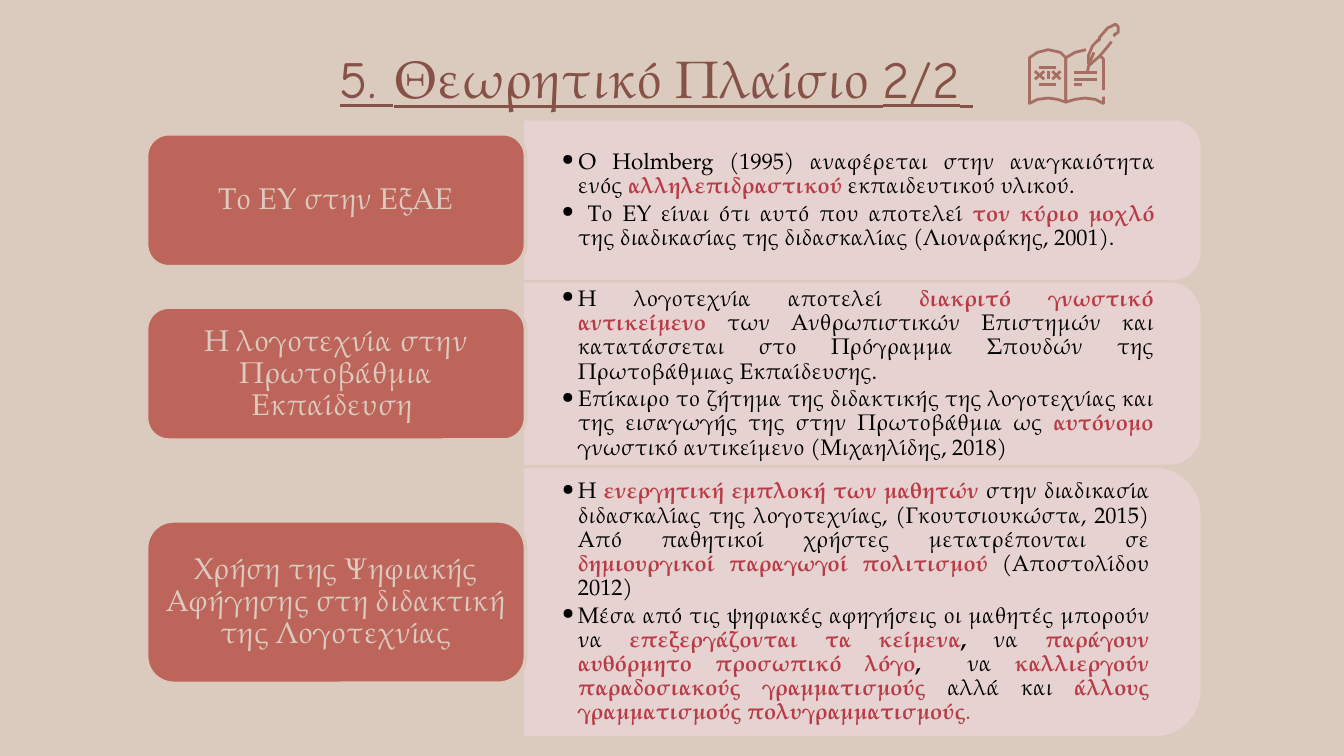
from typing import NamedTuple

from lxml import etree
from pptx import Presentation
from pptx import util as u
from pptx.dml.color import RGBColor
from pptx.enum import shapes, text
from pptx.oxml.ns import qn

SERIF, SANS = "TeX Gyre Pagella", "Comic Neue"
SAND, ROSE, CLAY = "DBCABE", "E8D3D2", "BE655B"
BROWN, INK, RED, BLACK = "865147", "A76F64", "B83C47", "000000"
PANEL_LEFT, PANEL_WIDTH = 3.91, 5.01
LABEL_LEFT, LABEL_WIDTH = 1.09, 2.82


class Span(NamedTuple):
    words: str
    color: str = BLACK
    bold: bool = False


class Section(NamedTuple):
    label: str
    middle: float
    panel_height: float
    label_height: float
    bullets: list[list[Span]]


def key(words: str) -> Span:
    """Emphasised phrase."""
    return Span(words, RED, True)


SECTIONS = [
    Section("Το ΕΥ στην ΕξΑΕ", 1.49, 1.16, 0.99, [
        [Span("Ο Holmberg (1995) αναφέρεται στην αναγκαιότητα ενός "),
         key("αλληλεπιδραστικού "), Span("εκπαιδευτικού υλικού.")],
        [Span(" Το ΕΥ είναι ότι αυτό που αποτελεί "), key("τον κύριο μοχλό "),
         Span("της διαδικασίας της διδασκαλίας (Λιοναράκης, 2001).")],
    ]),
    Section("Η λογοτεχνία στην Πρωτοβάθμια Εκπαίδευση ", 2.78, 1.33, 0.99, [
        [Span("H λογοτεχνία αποτελεί "), key("διακριτό γνωστικό αντικείμενο "),
         Span("των Ανθρωπιστικών Επιστημών και κατατάσσεται στο Πρόγραμμα "
              "Σπουδών της Πρωτοβάθμιας Εκπαίδευσης. ")],
        [Span("Επίκαιρο το ζήτημα της διδακτικής της λογοτεχνίας και της "
              "εισαγωγής της στην Πρωτοβάθμια ως "),
         key("αυτόνομο"), Span(" γνωστικό αντικείμενο (Μιχαηλίδης, 2018)")],
    ]),
    Section("Χρήση της Ψηφιακής Αφήγησης στη διδακτική της Λογοτεχνίας", 4.48, 1.97, 1.21, [
        [Span("H "), key("ενεργητική εμπλοκή των μαθητών "),
         Span("στην διαδικασία διδασκαλίας της λογοτεχνίας, (Γκουτσιουκώστα, 2015) "
              "Από παθητικοί χρήστες μετατρέπονται σε "),
         key("δημιουργικοί παραγωγοί πολιτισμού"), Span(" (Αποστολίδου 2012)")],
        [Span("Μέσα από τις ψηφιακές αφηγήσεις οι μαθητές μπορούν να "),
         key("επεξεργάζονται τα κείμενα"), Span(", ", bold=True), Span("να "),
         key("παράγουν αυθόρμητο προσωπικό λόγο"), Span(",  ", bold=True), Span("να "),
         key("καλλιεργούν παραδοσιακούς γραμματισμούς "), Span("αλλά και "),
         key("άλλους γραμματισμούς πολυγραμματισμούς"), Span(".", RED)],
    ]),
]

BOOK_AND_QUILL = [
    # left page, right page and its outer edge
    [(7.93, .43), (7.89, .39), (7.8, .37), (7.72, .39), (7.66, .43), (7.66, .77),
     (7.72, .74), (7.8, .73), (7.87, .74), (7.93, .76), (7.93, .43)],
    [(8.08, .37), (8, .39), (7.93, .43), (7.93, .76), (8, .74), (8.07, .73),
     (8.15, .74), (8.21, .77), (8.21, .72)],
    [(8.21, .67), (8.21, .44), (8.19, .42)],
    # numeral XIX between two rules
    [(7.7, .53), (7.77, .59)], [(7.77, .53), (7.7, .59)],
    [(7.8, .53), (7.8, .59)],
    [(7.83, .53), (7.89, .59)], [(7.89, .53), (7.83, .59)],
    [(7.73, .5), (7.86, .5)], [(7.73, .63), (7.86, .63)],
    # written lines
    [(7.99, .54), (8.16, .54)], [(7.99, .59), (8.16, .59)], [(7.99, .63), (8.05, .63)],
    # quill
    [(8.09, .54), (8.1, .49), (8.18, .42), (8.24, .35), (8.27, .31)],
    [(8.1, .48), (8.1, .41), (8.13, .34), (8.17, .3), (8.18, .3), (8.18, .28),
     (8.24, .21), (8.3, .18), (8.32, .2), (8.32, .24), (8.29, .26), (8.3, .27)],
    [(8.14, .39), (8.11, .46)],
]


def rgb(color: str) -> RGBColor:
    return RGBColor.from_string(color)


def add_span(para, words: str, size: int, color: str, bold=False, font=SERIF):
    span = para.add_run()
    span.text = words
    span.font.name, span.font.size, span.font.bold = font, u.Pt(size), bold
    span.font.color.rgb = rgb(color)
    return span


def set_frame(frame, anchor, side: float, end: float) -> None:
    """Wrap the text and set its anchor and margins."""
    frame.word_wrap = True
    frame.vertical_anchor = anchor
    frame.margin_left = frame.margin_right = u.Inches(side)
    frame.margin_top = frame.margin_bottom = u.Inches(end)


def add_block(page, kind, middle: tuple[float, float], size: tuple[float, float],
              fill: str, line: str):
    """Draw a filled shape around its middle point."""
    (x, y), (width, height) = middle, size
    block = page.shapes.add_shape(kind, u.Inches(x - width / 2), u.Inches(y - height / 2),
                                  u.Inches(width), u.Inches(height))
    block.shadow.inherit = False
    block.fill.solid()
    block.fill.fore_color.rgb = rgb(fill)
    block.line.color.rgb = rgb(line)
    block.line.width = u.Pt(2)
    return block


def add_bullet(para) -> None:
    properties = para._p.get_or_add_pPr()
    properties.set("marL", str(u.Inches(0.12)))
    properties.set("indent", str(u.Inches(-0.12)))
    color = etree.SubElement(properties, qn("a:buClr"))
    etree.SubElement(color, qn("a:srgbClr"), val=BLACK)
    etree.SubElement(properties, qn("a:buFont"), typeface=SERIF)
    etree.SubElement(properties, qn("a:buChar"), char="•")


def add_section(page, section: Section) -> None:
    height = section.panel_height
    panel = add_block(page, shapes.MSO_SHAPE.ROUND_2_SAME_RECTANGLE,
                      (PANEL_LEFT + PANEL_WIDTH / 2, section.middle),
                      (height, PANEL_WIDTH), ROSE, ROSE)
    panel.rotation = 90
    for color in panel._element.spPr.iter(qn("a:srgbClr")):
        etree.SubElement(color, qn("a:alpha"), val="90000")

    # The text area stays clear of the rounded corners
    box = page.shapes.add_textbox(
        u.Inches(PANEL_LEFT), u.Inches(section.middle - 0.45 * height),
        u.Inches(PANEL_WIDTH - 0.05 * height), u.Inches(0.9 * height))
    set_frame(box.text_frame, text.MSO_ANCHOR.MIDDLE, 0.27, 0.14)
    for number, bullet in enumerate(section.bullets):
        para = box.text_frame.add_paragraph() if number else box.text_frame.paragraphs[0]
        add_bullet(para)
        para.level = 1
        para.alignment = text.PP_ALIGN.JUSTIFY
        para.line_spacing = 0.9
        para.space_after = u.Pt(1.8)
        for span in bullet:
            add_span(para, span.words, 12, span.color, span.bold)

    label = add_block(page, shapes.MSO_SHAPE.ROUNDED_RECTANGLE,
                      (LABEL_LEFT + LABEL_WIDTH / 2, section.middle),
                      (LABEL_WIDTH, section.label_height), CLAY, SAND)
    set_frame(label.text_frame, text.MSO_ANCHOR.MIDDLE, 0.07, 0.03)
    para = label.text_frame.paragraphs[0]
    para.alignment = text.PP_ALIGN.CENTER
    para.line_spacing = 0.9
    add_span(para, section.label, 16, SAND)


def add_stroke(page, points: list[tuple[float, float]]) -> None:
    """Draw a straight line or an open outline."""
    if len(points) == 2:
        ends = [u.Inches(value) for point in points for value in point]
        stroke = page.shapes.add_connector(shapes.MSO_CONNECTOR.STRAIGHT, *ends)
        etree.SubElement(stroke._element.spPr, qn("a:effectLst"))
    else:
        grid = [(round(x * 100), round(y * 100)) for x, y in points]
        builder = page.shapes.build_freeform(*grid[0], scale=u.Inches(0.01))
        builder.add_line_segments(grid[1:], close=False)
        stroke = builder.convert_to_shape()
        stroke.shadow.inherit = False
        stroke.fill.background()
    stroke.line.color.rgb = rgb(INK)
    stroke.line.width = u.Pt(1.5)


def add_title(page) -> None:
    box = page.shapes.add_textbox(u.Inches(2.17), 0, u.Inches(5.43), u.Inches(0.91))
    set_frame(box.text_frame, text.MSO_ANCHOR.BOTTOM, 0.1, 0.1)
    para = box.text_frame.paragraphs[0]
    para.alignment = text.PP_ALIGN.CENTER
    para.line_spacing = 0.8
    for words, font in (("5. ", SANS), ("Θεωρητικό Πλαίσιο ", SERIF), ("2/2", SANS), (" ", SERIF)):
        add_span(para, words, 28, BROWN, font=font).font.underline = True


def main() -> None:
    deck = Presentation()
    deck.slide_width = u.Inches(10)
    deck.slide_height = deck.slide_width * 9 // 16
    page = deck.slides.add_slide(deck.slide_layouts[6])
    page.background.fill.solid()
    page.background.fill.fore_color.rgb = rgb(SAND)
    add_title(page)
    for section in SECTIONS:
        add_section(page, section)
    for points in BOOK_AND_QUILL:
        add_stroke(page, points)
    deck.save("out.pptx")


if __name__ == "__main__":
    main()
